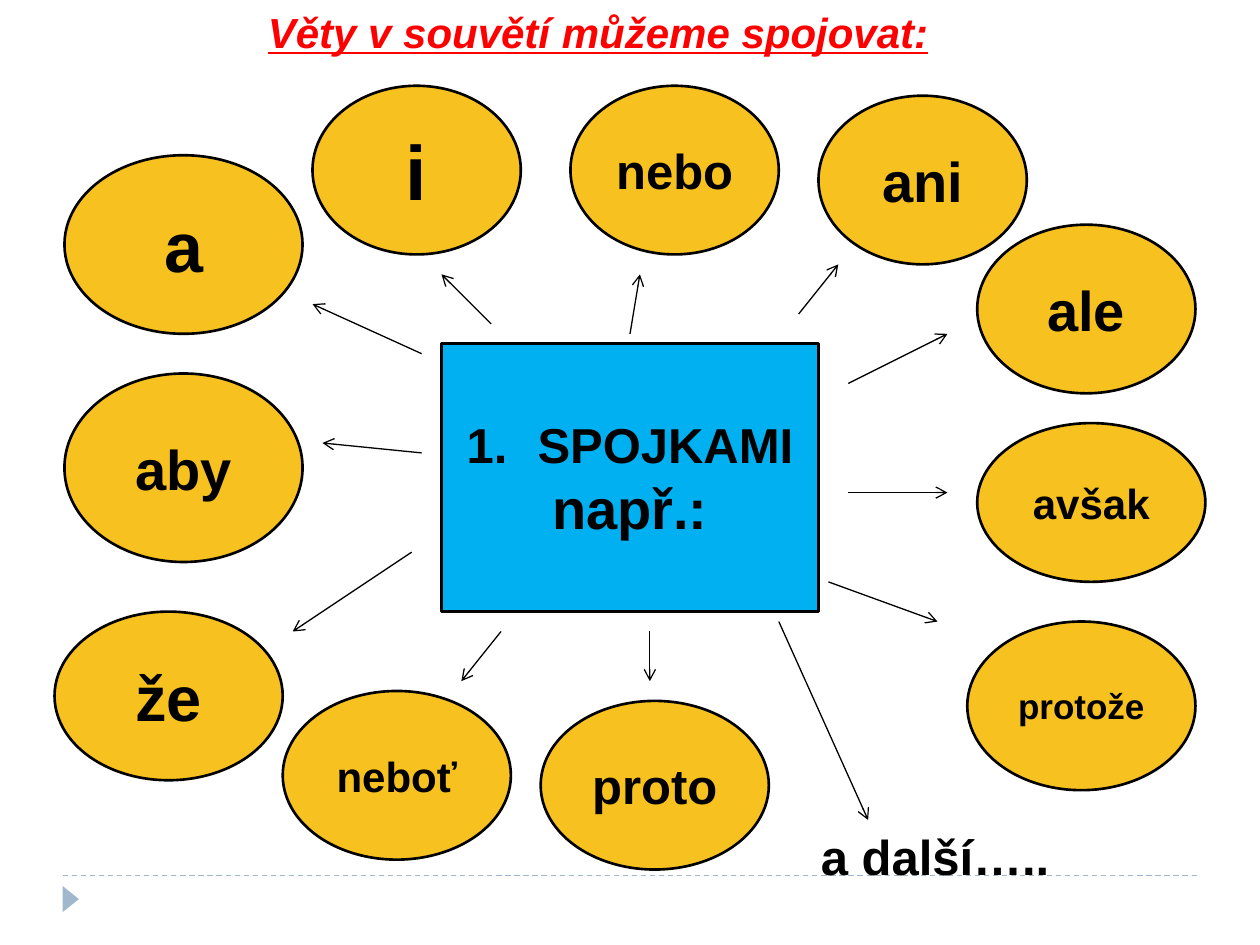
import pptx
import pptx.util
import pptx.dml.color
import pptx.enum.dml
import pptx.enum.shapes
import pptx.enum.text
import pptx.oxml
import pptx.oxml.ns
from lxml import etree

Cm, Pt = pptx.util.Cm, pptx.util.Pt
KIND = pptx.enum.shapes.MSO_SHAPE
ALIGN = pptx.enum.text.PP_ALIGN
MIDDLE = pptx.enum.text.MSO_ANCHOR.MIDDLE

HUES = {
    "ink": "000000",
    "title": "FF0000",
    "box": "00B0F0",
    "oval": "F7C120",
    "trim": "9FB8CD",
}
FONT = {"name": "Arial", "bold": True}
TITLE = {"italic": True, "underline": True}

WORDS = [
    ("i", 44, 6.3, 1.73, 4.2, 3.4),
    ("nebo", 28, 11.5, 1.73, 4.2, 3.4),
    ("ani", 32, 16.5, 1.93, 4.2, 3.4),
    ("ale", 32, 19.7, 4.53, 4.4, 3.4),
    ("avšak", 24, 19.7, 8.53, 4.6, 3.2),
    ("proto", 28, 10.9, 14.13, 4.6, 3.4),
    ("že", 36, 1.1, 12.33, 4.6, 3.4),
    ("neboť", 24, 5.7, 13.93, 4.6, 3.4),
    ("aby", 32, 1.3, 7.53, 4.8, 3.8),
    ("a", 40, 1.3, 3.13, 4.8, 3.6),
    ("protože", 20, 19.5, 12.53, 4.6, 3.4),
]
ARROWS = [
    (17.1, 7.73, 19.1, 6.73),
    (17.1, 9.93, 19.1, 9.93),
    (16.7, 11.73, 18.9, 12.53),
    (15.7, 12.53, 17.5, 16.53),
    (13.1, 12.73, 13.1, 13.73),
    (8.5, 7.13, 6.3, 6.13),
    (8.5, 9.13, 6.5, 8.93),
    (8.3, 11.13, 5.9, 12.73),
    (10.1, 12.73, 9.3, 13.73),
    (9.9, 6.53, 8.9, 5.53),
    (12.7, 6.73, 12.9, 5.53),
    (16.1, 6.33, 16.9, 5.33),
]


def hue(key):
    return pptx.dml.color.RGBColor.from_string(HUES[key])


def child(node, tag, **attrs):
    return etree.SubElement(node, pptx.oxml.ns.qn(tag), attrs)


def write(para, text, size, key="ink", **extra):
    run = para.add_run()
    run.text = text
    look = {**FONT, "size": Pt(size), **extra}
    for name, value in look.items():
        setattr(run.font, name, value)
    run.font.color.rgb = hue(key)


def shape(slide, kind, place, key, edge=None):
    item = slide.shapes.add_shape(kind, *map(Cm, place))
    item.shadow.inherit = False
    item.fill.solid()
    item.fill.fore_color.rgb = hue(key)
    if edge:
        item.line.color.rgb = hue(edge)
        item.line.width = Pt(1.5)
    else:
        item.line.fill.background()
    item.text_frame.vertical_anchor = MIDDLE
    return item


def oval(slide, text, size, *place):
    item = shape(slide, KIND.OVAL, place, "oval", "ink")
    para = item.text_frame.paragraphs[0]
    para.alignment = ALIGN.CENTER
    write(para, text, size)


def center(slide):
    item = shape(slide, KIND.RECTANGLE, (8.9, 6.93, 7.6, 5.4), "box", "ink")
    frame = item.text_frame
    first, second = frame.paragraphs[0], frame.add_paragraph()
    for para in (first, second):
        para.alignment = ALIGN.CENTER
        props = para._p.get_or_add_pPr()
        props.set("marL", str(Cm(1.43)))
        props.set("indent", str(-Cm(1.43)))
    child(first._p.get_or_add_pPr(), "a:buAutoNum", type="arabicPeriod")
    write(first, "SPOJKAMI", 28)
    write(second, "např.:", 32)


def label(slide, text, size, place, key="ink", **extra):
    box = slide.shapes.add_textbox(*map(Cm, place))
    box.text_frame.word_wrap = False
    write(box.text_frame.paragraphs[0], text, size, key, **extra)


def line(slide, ends, key):
    item = slide.shapes.add_connector(
        pptx.enum.shapes.MSO_CONNECTOR.STRAIGHT, *map(Cm, ends))
    item.line.color.rgb = hue(key)
    item.line.width = Pt(0.75)
    child(item._element.spPr, "a:effectLst")
    return item


def arrow(slide, ends):
    item = line(slide, ends, "ink")
    child(item.line._get_or_add_ln(), "a:tailEnd", type="arrow")


def footer(slide):
    rule = line(slide, (1.27, 17.65, 24.13, 17.65), "trim")
    rule.line.dash_style = pptx.enum.dml.MSO_LINE.DASH
    mark = shape(slide, KIND.ISOSCELES_TRIANGLE,
                 (1.16, 17.96, 0.53, 0.33), "trim")
    mark.rotation = 90


def main():
    deck = pptx.Presentation()
    deck.slide_width, deck.slide_height = Cm(25.4), Cm(19.05)
    slide = deck.slides.add_slide(deck.slide_layouts[6])
    footer(slide)
    label(slide, "Věty v souvětí můžeme spojovat:", 24,
          (5.15, 0, 13.9, 1.2), "title", **TITLE)
    center(slide)
    for word in WORDS:
        oval(slide, *word)
    label(slide, "a další…..", 28, (16.3, 16.53, 5.2, 1.45))
    for ends in ARROWS:
        arrow(slide, ends)
    deck.save("out.pptx")


if __name__ == "__main__":
    main()
